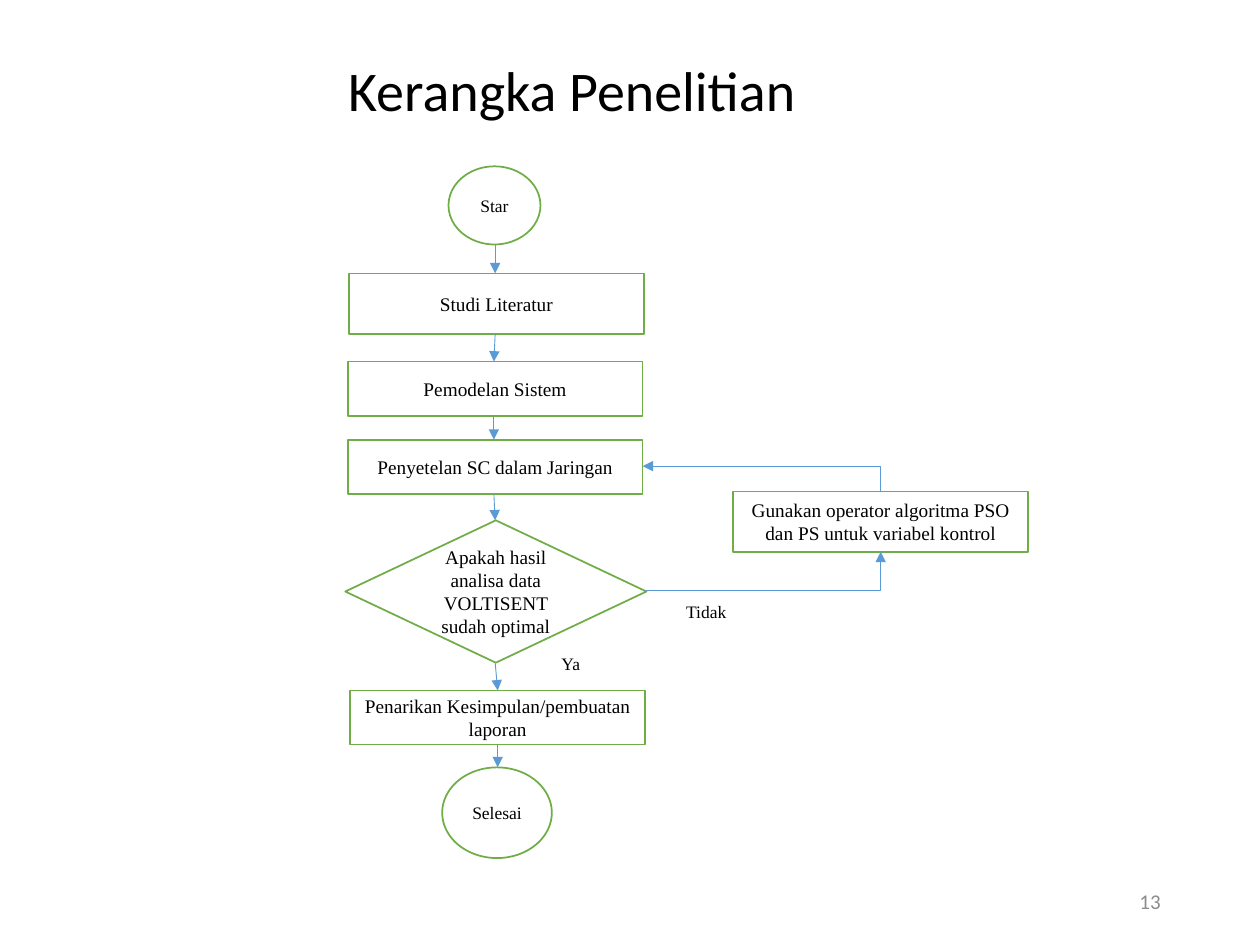
"""Build the research framework flowchart slide."""
from lxml import etree
from pptx import Presentation
from pptx import util as u
from pptx.dml import color
from pptx.enum import shapes, text
from pptx.oxml import ns

RECT = shapes.MSO_SHAPE.RECTANGLE
OVAL = shapes.MSO_SHAPE.OVAL
DIAMOND = shapes.MSO_SHAPE.DIAMOND
CENTER = text.PP_ALIGN.CENTER


def rgb(value):
    """Turn a hex string into a colour."""
    return color.RGBColor.from_string(value)


class FlowPage:
    """Hold the style and the current slide."""

    heading_font, node_font = "Calibri", "Times New Roman"
    ink, paper, border, arrow_color, muted = "000000", "FFFFFF", "70AD47", "5B9BD5", "8C8C8C"

    def __init__(self, page):
        """Keep the slide to draw on."""
        self.page = page

    def label(self, box, words, font, size, ink, align=CENTER):
        """Fill a box with one formatted paragraph."""
        frame = box.text_frame
        frame.text = words
        frame.word_wrap = True
        frame.vertical_anchor = text.MSO_ANCHOR.MIDDLE
        para = frame.paragraphs[0]
        para.alignment = align
        for span in para.runs:
            span.font.name = font
            span.font.size = u.Pt(size)
            span.font.color.rgb = rgb(ink)
        return para

    def title(self, words, left, top, width, height):
        """Place and format the title placeholder."""
        box = self.page.shapes.title
        box.left, box.top, box.width, box.height = map(u.Inches, (left, top, width, height))
        self.label(box, words, self.heading_font, 32, self.ink).line_spacing = 0.9

    def number(self, words, left, top, width, height):
        """Add the page number."""
        box = self.page.shapes.add_textbox(*map(u.Inches, (left, top, width, height)))
        self.label(box, words, self.heading_font, 12, self.muted, text.PP_ALIGN.RIGHT)

    def node(self, kind, words, left, top, width, height, size=11, outlined=True):
        """Add a flowchart shape with its label."""
        shape = self.page.shapes.add_shape(kind, *map(u.Inches, (left, top, width, height)))
        shape.shadow.inherit = False
        shape.fill.solid()
        shape.fill.fore_color.rgb = rgb(self.paper)
        if outlined:
            shape.line.color.rgb = rgb(self.border)
            shape.line.width = u.Pt(1)
        else:
            shape.line.fill.background()
        self.label(shape, words, self.node_font, size, self.ink)

    def arrow(self, start, end, bent=False, tip="tailEnd"):
        """Add a straight or single-bend arrow."""
        kind = shapes.MSO_CONNECTOR.ELBOW if bent else shapes.MSO_CONNECTOR.STRAIGHT
        line = self.page.shapes.add_connector(kind, *map(u.Inches, (*start, *end)))
        line.line.color.rgb = rgb(self.arrow_color)
        line.line.width = u.Pt(0.5)
        properties = line._element.spPr
        if bent:
            properties.find(ns.qn("a:prstGeom")).set("prst", "bentConnector2")
        etree.SubElement(properties.find(ns.qn("a:ln")), ns.qn(f"a:{tip}"), type="triangle")
        etree.SubElement(properties, ns.qn("a:effectLst"))


def main():
    """Build and save the deck."""
    deck = Presentation()
    deck.slide_width, deck.slide_height = u.Inches(10), u.Inches(7.5)
    flow = FlowPage(deck.slides.add_slide(deck.slide_layouts[5]))
    flow.title("Kerangka Penelitian", 2.26, 0.43, 4.56, 0.62)
    flow.number("13", 7.06, 6.95, 2.25, 0.4)

    steps = [
        ("Studi Literatur", 2.77, 2.17, 0.48),
        ("Pemodelan Sistem", 2.76, 2.87, 0.43),
        ("Penyetelan SC dalam Jaringan", 2.76, 3.49, 0.43),
        ("Gunakan operator algoritma PSO dan PS untuk variabel kontrol", 5.82, 3.9, 0.48),
        ("Penarikan Kesimpulan/pembuatan laporan", 2.78, 5.48, 0.43),
    ]
    for words, left, top, height in steps:
        flow.node(RECT, words, left, top, 2.34, height)
    flow.node(DIAMOND, "Apakah hasil analisa data VOLTISENT sudah optimal", 2.74, 4.13, 2.39, 1.13)
    flow.node(OVAL, "Star", 3.56, 1.32, 0.73, 0.62, size=10)
    flow.node(OVAL, "Selesai", 3.51, 6.09, 0.87, 0.72, size=10)
    flow.node(OVAL, "Tidak", 5.15, 4.64, 0.91, 0.42, size=10, outlined=False)
    flow.node(OVAL, "Ya", 4.22, 5.07, 0.62, 0.4, size=10, outlined=False)

    links = [
        ((3.93, 1.94), (3.93, 2.17)),
        ((3.93, 2.65), (3.92, 2.87)),
        ((3.92, 3.3), (3.92, 3.49)),
        ((3.92, 3.92), (3.93, 4.13)),
        ((3.93, 5.26), (3.95, 5.48)),
        ((3.95, 5.91), (3.95, 6.09)),
    ]
    for start, end in links:
        flow.arrow(start, end)
    flow.arrow((5.13, 4.69), (6.99, 4.38), bent=True)
    flow.arrow((5.1, 3.7), (6.99, 3.9), bent=True, tip="headEnd")
    deck.save("out.pptx")


if __name__ == "__main__":
    main()
